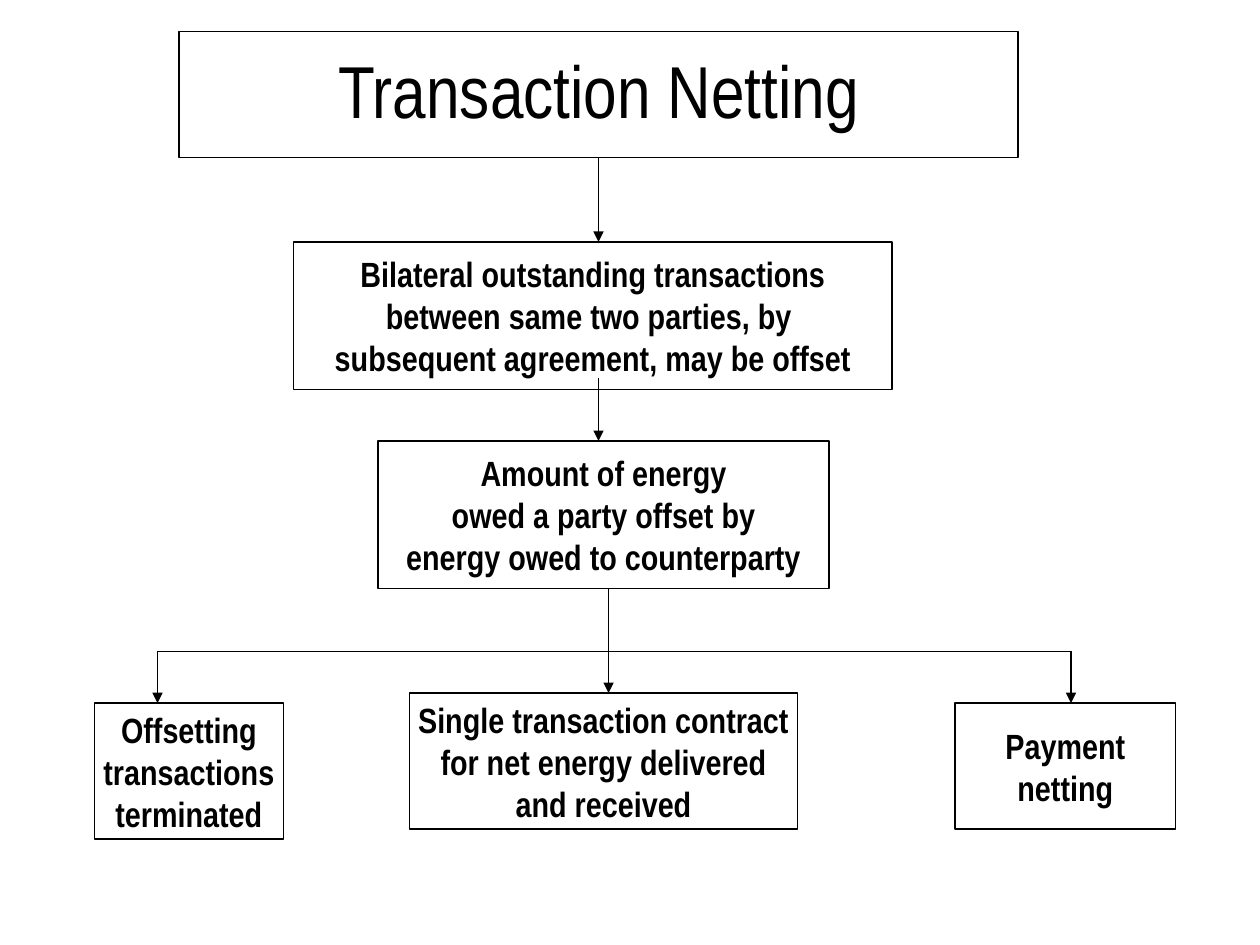
from pptx import Presentation
from pptx import util as u
from pptx.dml.color import RGBColor
from pptx.enum import shapes, text
from pptx.oxml.ns import qn
from lxml import etree

BLACK, WHITE = "000000", "FFFFFF"


def paint(part, color):
    """Give a fill or a font a solid colour from a hex string."""
    if hasattr(part, "solid"):
        part.solid()
        part.fore_color.rgb = RGBColor.from_string(color)
    else:
        part.color.rgb = RGBColor.from_string(color)


prs = Presentation()
prs.slide_width, prs.slide_height = u.Inches(10), u.Inches(7.5)
slide = prs.slides.add_slide(prs.slide_layouts[6])

# Boxes: left, top, width, height, wording
steps = [
    (1.42, 0.25, 6.66, 1, "Transaction Netting"),
    (2.33, 1.92, 4.75, 1.17,
     "Bilateral outstanding transactions\nbetween same two parties, by \n"
     "subsequent agreement, may be offset"),
    (3, 3.5, 3.58, 1.17,
     "Amount of energy\nowed a party offset by\nenergy owed to counterparty"),
    (0.75, 5.58, 1.5, 1.08, "Offsetting\ntransactions\nterminated"),
    (3.25, 5.5, 3.08, 1.08,
     "Single transaction contract\nfor net energy delivered\nand received"),
    (7.58, 5.58, 1.75, 1, "Payment\nnetting"),
]
boxes = []
for *place, words in steps:
    box = slide.shapes.add_shape(shapes.MSO_SHAPE.RECTANGLE, *map(u.Inches, place))
    box.shadow.inherit = False
    title = not boxes
    if title:
        box.fill.background()
    else:
        paint(box.fill, WHITE)
    paint(box.line.fill, BLACK)
    box.line.width = u.Pt(0.75)
    frame = box.text_frame
    frame.word_wrap = False
    frame.vertical_anchor = text.MSO_ANCHOR.MIDDLE
    frame.text = words
    for para in frame.paragraphs:
        para.alignment = text.PP_ALIGN.CENTER
        if title:
            para.line_spacing = 0.9
        for run in para.runs:
            run.font.name = "Arial Narrow"
            run.font.size = u.Pt(42 if title else 20)
            run.font.bold = not title
            paint(run.font, BLACK)
    boxes.append(box)

# Lines: start x, start y, end x, end y, arrowhead at the end
links = [
    (4.75, 1.25, 4.75, 1.92, True),
    (4.75, 3, 4.75, 3.5, True),
    (1.25, 5.17, 8.5, 5.17, False),
    (4.83, 4.67, 4.83, 5.5, True),
    (1.25, 5.17, 1.25, 5.58, True),
    (8.5, 5.17, 8.5, 5.58, True),
]
lines = []
for *ends, arrow in links:
    line = slide.shapes.add_connector(
        shapes.MSO_CONNECTOR.STRAIGHT, *map(u.Inches, ends))
    paint(line.line.fill, BLACK)
    line.line.width = u.Pt(0.75)
    if arrow:
        etree.SubElement(line.line._get_or_add_ln(), qn("a:tailEnd"), type="triangle")
    etree.SubElement(line._element.spPr, qn("a:effectLst"))
    lines.append(line)
lines[0].begin_connect(boxes[0], 2)

prs.save("out.pptx")
